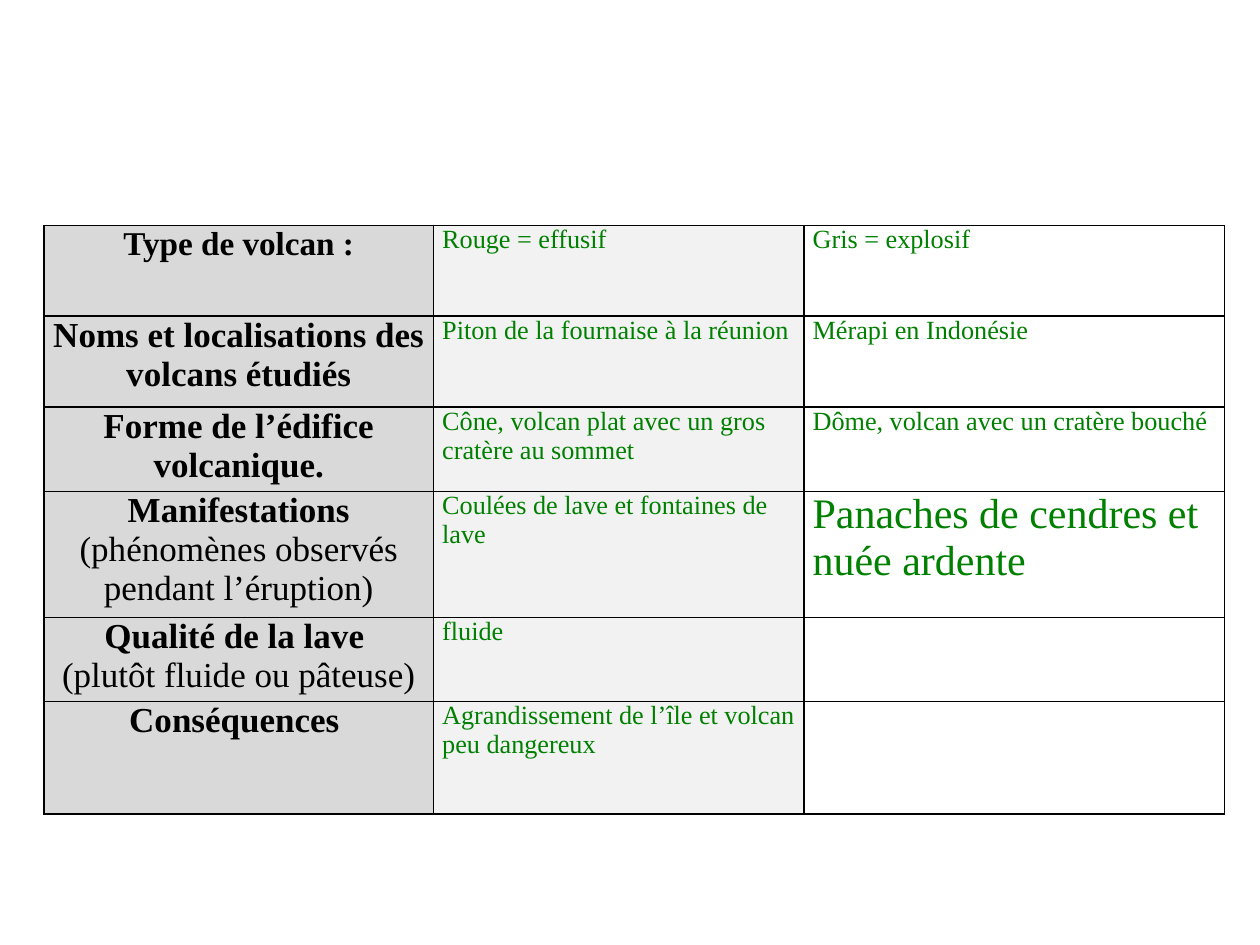
from lxml import etree
from pptx import Presentation
from pptx import util as u
from pptx.dml.color import RGBColor
from pptx.enum import text
from pptx.oxml.ns import qn

COLOURS = {"black": "000000", "green": "008000", "label": "D9D9D9", "effusive": "F2F2F2"}
COLUMN_FILLS = ["label", "effusive", None]
COLUMN_WIDTHS = [3.09, 2.94, 3.34]
ROW_HEIGHTS = [0.72, 0.72, 0.67, 1, 0.67, 0.89]
FONT = "Times New Roman"
LABEL = {"size": 20, "align": text.PP_ALIGN.CENTER}
BOLD = {"bold": True}
ANSWER = {"size": 15, "colour": "green"}

ROWS = [
    ([[("Type de volcan :", BOLD)]], "Rouge = effusif", "Gris = explosif"),
    ([[("Noms et localisations des volcans étudiés", BOLD)]],
     "Piton de la fournaise à la réunion", "Mérapi en Indonésie"),
    ([[("Forme de l’édifice volcanique.", BOLD)]],
     "Cône, volcan plat avec un gros cratère au sommet",
     "Dôme, volcan avec un cratère bouché"),
    ([[("Manifestations ", BOLD), ("(phénomènes observés pendant l’éruption)", {})]],
     "Coulées de lave et fontaines de lave", "Panaches de cendres et nuée ardente"),
    ([[("Qualité de la lave ", BOLD)], [("(plutôt fluide ou pâteuse)", {})]], "fluide", ""),
    ([[("Conséquences ", BOLD)]], "Agrandissement de l’île et volcan peu dangereux", ""),
]
SIZES = {(0, 0): 19, (3, 2): 24}


def add_text(paragraph, content, size, colour="black", bold=False, align=None):
    """Add one formatted run to a paragraph."""
    paragraph.alignment = align
    run = paragraph.add_run()
    run.text = content
    run.font.name = FONT
    run.font.size = u.Pt(size)
    run.font.bold = bold
    run.font.color.rgb = RGBColor.from_string(COLOURS[colour])


def fill_text(cell, paragraphs, **options):
    """Write paragraphs of (wording, format) runs into a cell."""
    for index, runs in enumerate(paragraphs):
        frame = cell.text_frame
        paragraph = frame.add_paragraph() if index else frame.paragraphs[0]
        for content, emphasis in runs:
            add_text(paragraph, content, **options, **emphasis)


def style_cell(cell, fill):
    """Set the margins, borders and fill of a cell."""
    cell.margin_left = cell.margin_right = u.Inches(0.07)
    cell.margin_top = cell.margin_bottom = 0
    properties = cell._tc.get_or_add_tcPr()
    for side in ("a:lnL", "a:lnR", "a:lnT", "a:lnB"):
        line = etree.SubElement(properties, qn(side), w=str(u.Pt(1)))
        solid = etree.SubElement(line, qn("a:solidFill"))
        etree.SubElement(solid, qn("a:srgbClr"), val=COLOURS["black"])
    if fill:
        cell.fill.solid()
        cell.fill.fore_color.rgb = RGBColor.from_string(COLOURS[fill])
    else:
        cell.fill.background()


def add_volcano_table(slide, left, top, width, height):
    """Place the table comparing both volcano types in the given box."""
    frame = slide.shapes.add_table(len(ROWS), len(COLUMN_WIDTHS), left, top, width, height)
    table = frame.table
    table.first_row = table.horz_banding = False
    for column, share in zip(table.columns, COLUMN_WIDTHS):
        column.width = int(width * share / sum(COLUMN_WIDTHS))
    for row, share in zip(table.rows, ROW_HEIGHTS):
        row.height = int(height * share / sum(ROW_HEIGHTS))
    for row_index, (label, *answers) in enumerate(ROWS):
        contents = [label] + [[[(answer, {})]] if answer else [] for answer in answers]
        for column_index, paragraphs in enumerate(contents):
            cell = table.cell(row_index, column_index)
            style_cell(cell, COLUMN_FILLS[column_index])
            options = dict(ANSWER if column_index else LABEL)
            options["size"] = SIZES.get((row_index, column_index), options["size"])
            fill_text(cell, paragraphs, **options)


def main():
    """Build and save the presentation."""
    presentation = Presentation()
    presentation.slide_width = u.Inches(10)
    presentation.slide_height = u.Inches(7.5)
    slide = presentation.slides.add_slide(presentation.slide_layouts[6])
    add_volcano_table(slide, u.Inches(0.35), u.Inches(1.79), u.Inches(9.37), u.Inches(4.67))
    presentation.save("out.pptx")


if __name__ == "__main__":
    main()
